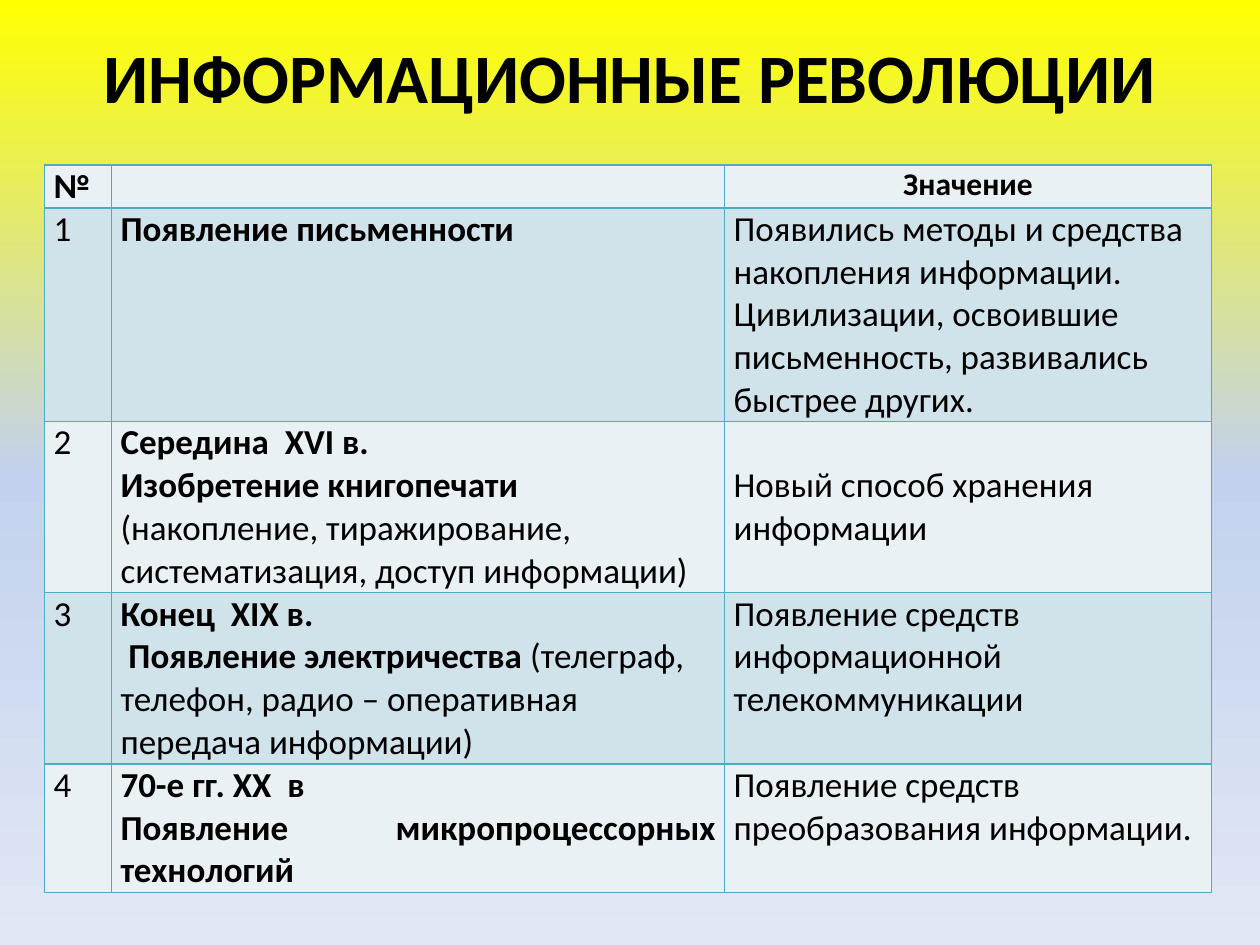
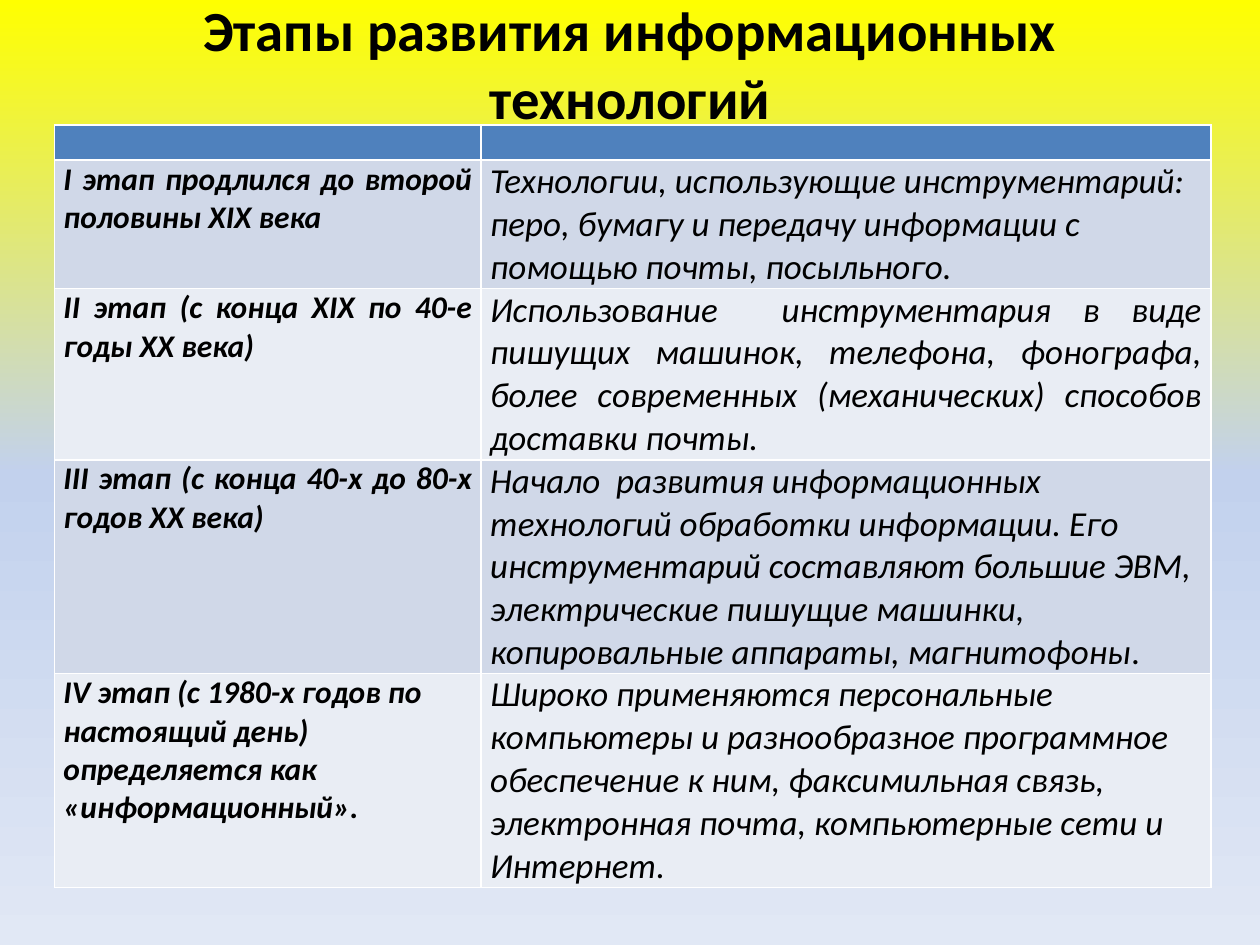
from copy import deepcopy
from dataclasses import dataclass

from lxml import etree
from pptx import Presentation
from pptx.dml.color import RGBColor
from pptx.enum.text import MSO_ANCHOR, PP_ALIGN
from pptx.oxml.ns import qn
from pptx.util import Cm, Pt

LEFT, CENTER, JUSTIFY = PP_ALIGN.LEFT, PP_ALIGN.CENTER, PP_ALIGN.JUSTIFY
MIDDLE = MSO_ANCHOR.MIDDLE

FONT = "Calibri"
BLACK = RGBColor(0x00, 0x00, 0x00)
WHITE = RGBColor(0xFF, 0xFF, 0xFF)
TEAL = RGBColor(0x4B, 0xAC, 0xC6)
TEAL_BANDS = (RGBColor(0xE9, 0xF1, 0xF5), RGBColor(0xD0, 0xE3, 0xEA))
BLUE = RGBColor(0x4F, 0x81, 0xBD)
BLUE_BANDS = (RGBColor(0xE9, 0xED, 0xF4), RGBColor(0xD0, 0xD8, 0xE8))
SKY = ((0, RGBColor(0xFF, 0xFF, 0x00)),
       (0.5, RGBColor(0xC2, 0xD1, 0xED)),
       (1, RGBColor(0xE1, 0xE8, 0xF5)))

SIDE_INSET = Cm(0.18)
# Row heights by the number of 20 pt lines
ROW_HEIGHTS = {1: Cm(0.86), 3: Cm(2.59), 4: Cm(3.45), 5: Cm(4.31)}


@dataclass
class Para:
    """A paragraph in one style, with an optional plain ending."""
    text: str
    size: int = 20
    bold: bool = False
    italic: bool = False
    align: PP_ALIGN = LEFT
    ending: str = ""


@dataclass
class Cell:
    paras: list
    top: int = 0


def number(text):
    return Cell([Para(text)])


def event(*paras):
    return Cell([Para(text, bold=True, align=align, ending=ending)
                 for text, align, ending in paras])


def meaning(text, top=0):
    return Cell([Para(text)], top)


def stage(text, align=JUSTIFY):
    return Cell([Para(text, 18, True, True, align)])


def tools(text, align=LEFT, ending=""):
    return Cell([Para(text, italic=True, align=align, ending=ending)])


EMPTY = Cell([Para("", 12)])

REVOLUTIONS = [
    [Cell([Para("№", bold=True)]), EMPTY,
     Cell([Para("Значение", 18, True, align=CENTER)])],
    [number("1"), event(("Появление письменности", JUSTIFY, "")),
     meaning("Появились методы и средства накопления информации. Цивилизации, "
             "освоившие письменность, развивались быстрее других.")],
    [number("2"),
     event(("Середина  XVI в.", JUSTIFY, ""),
           ("Изобретение книгопечати ", LEFT,
            "(накопление, тиражирование, систематизация, доступ информации)")),
     meaning("Новый способ хранения информации", ROW_HEIGHTS[1])],
    [number("3"),
     event(("Конец  XIX в.", JUSTIFY, ""),
           (" Появление электричества ", LEFT,
            "(телеграф, телефон, радио – оперативная передача информации)")),
     meaning("Появление средств информационной телекоммуникации")],
    [number("4"),
     event(("70-е гг. XX  в", JUSTIFY, ""),
           ("Появление микропроцессорных технологий", JUSTIFY, "")),
     meaning("Появление средств преобразования информации.")],
]

STAGES = [
    [EMPTY, EMPTY],
    [stage("I этап продлился до второй половины XIX века"),
     tools("Технологии, использующие инструментарий: перо, бумагу и передачу "
           "информации с помощью почты, посыльного.")],
    [stage("II этап (с конца XIX по 40-е годы XX века)"),
     tools("Использование  инструментария в виде пишущих машинок, телефона, "
           "фонографа, более современных (механических) способов доставки почты.",
           JUSTIFY)],
    [stage("III этап (с конца 40-х до 80-х годов XX века)"),
     tools("Начало  развития информационных технологий обработки информации. "
           "Его инструментарий составляют большие ЭВМ, электрические пишущие "
           "машинки, копировальные аппараты, магнитофоны", ending=".")],
    [stage("IV этап (с 1980-х годов по настоящий день) определяется как "
           "«информационный».", LEFT),
     tools("Широко применяются персональные компьютеры и разнообразное "
           "программное обеспечение к ним, факсимильная связь, электронная "
           "почта, компьютерные сети и Интернет.")],
]


def paint_sky(master):
    fill = master.background.fill
    fill.gradient()
    fill.gradient_angle = 270
    stops = master.element.find(".//" + qn("a:gsLst"))
    stops.append(deepcopy(stops[-1]))
    for stop, (position, color) in zip(fill.gradient_stops, SKY):
        stop.position = position
        stop.color.rgb = color


def style_font(font, size, bold, italic=False):
    font.name = FONT
    font.size = Pt(size)
    font.bold = bold
    font.italic = italic
    font.color.rgb = BLACK


def add_title(slide, text, size, height):
    """Title centred in a band of the given height at the top of the slide."""
    frame = slide.shapes.add_textbox(Cm(1.27), 0, Cm(22.86), height).text_frame
    frame.word_wrap = True
    frame.vertical_anchor = MIDDLE
    frame.margin_top = frame.margin_bottom = 0
    title = frame.paragraphs[0]
    title.text = text
    title.alignment = CENTER
    style_font(title.font, size, True)


def set_borders(cell, color):
    properties = cell._tc.get_or_add_tcPr()
    for index, side in enumerate(("a:lnL", "a:lnR", "a:lnT", "a:lnB")):
        line = etree.Element(qn(side), w=str(Pt(1)))
        solid = etree.SubElement(line, qn("a:solidFill"))
        etree.SubElement(solid, qn("a:srgbClr"), val=str(color))
        properties.insert(index, line)


def write_cell(cell, content):
    cell.margin_left = cell.margin_right = SIDE_INSET
    cell.margin_top, cell.margin_bottom = content.top, 0
    frame = cell.text_frame
    for index, para in enumerate(content.paras):
        paragraph = frame.add_paragraph() if index else frame.paragraphs[0]
        paragraph.alignment = para.align
        if para.ending:
            for text, bold, italic in ((para.text, para.bold, para.italic),
                                       (para.ending, False, False)):
                run = paragraph.add_run()
                run.text = text
                style_font(run.font, para.size, bold, italic)
        else:
            paragraph.text = para.text
            style_font(paragraph.font, para.size, para.bold, para.italic)


def add_grid(slide, rows, left, top, widths, heights, bands, border, header_fill):
    table = slide.shapes.add_table(len(rows), len(widths), left, top,
                                   sum(widths), sum(heights)).table
    table.first_row = table.horz_banding = False
    for column, width in zip(table.columns, widths):
        column.width = width
    for r, (row, height) in enumerate(zip(rows, heights)):
        table.rows[r].height = height
        for c, content in enumerate(row):
            cell = table.cell(r, c)
            write_cell(cell, content)
            cell.fill.solid()
            cell.fill.fore_color.rgb = bands[r % 2] if r else header_fill
            set_borders(cell, border)


def main():
    prs = Presentation()
    prs.slide_width, prs.slide_height = Cm(25.4), Cm(19.05)
    paint_sky(prs.slide_master)
    blank = prs.slide_layouts[6]

    revolutions = prs.slides.add_slide(blank)
    add_title(revolutions, "ИНФОРМАЦИОННЫЕ РЕВОЛЮЦИИ", 39.6, Cm(3.05))
    add_grid(revolutions, REVOLUTIONS, Cm(0.9), Cm(3.33),
             [Cm(1.35), Cm(12.36), Cm(9.81)],
             [ROW_HEIGHTS[lines] for lines in (1, 5, 4, 4, 3)],
             TEAL_BANDS, TEAL, TEAL_BANDS[0])

    stages = prs.slides.add_slide(blank)
    add_title(stages, "Этапы развития информационных технологий", 32.4, Cm(2.52))
    add_grid(stages, STAGES, Cm(1.1), Cm(2.52),
             [Cm(8.6), Cm(14.71)],
             [Cm(0.71)] + [ROW_HEIGHTS[lines] for lines in (3, 4, 5, 5)],
             BLUE_BANDS, WHITE, BLUE)

    prs.save("out.pptx")


if __name__ == "__main__":
    main()
